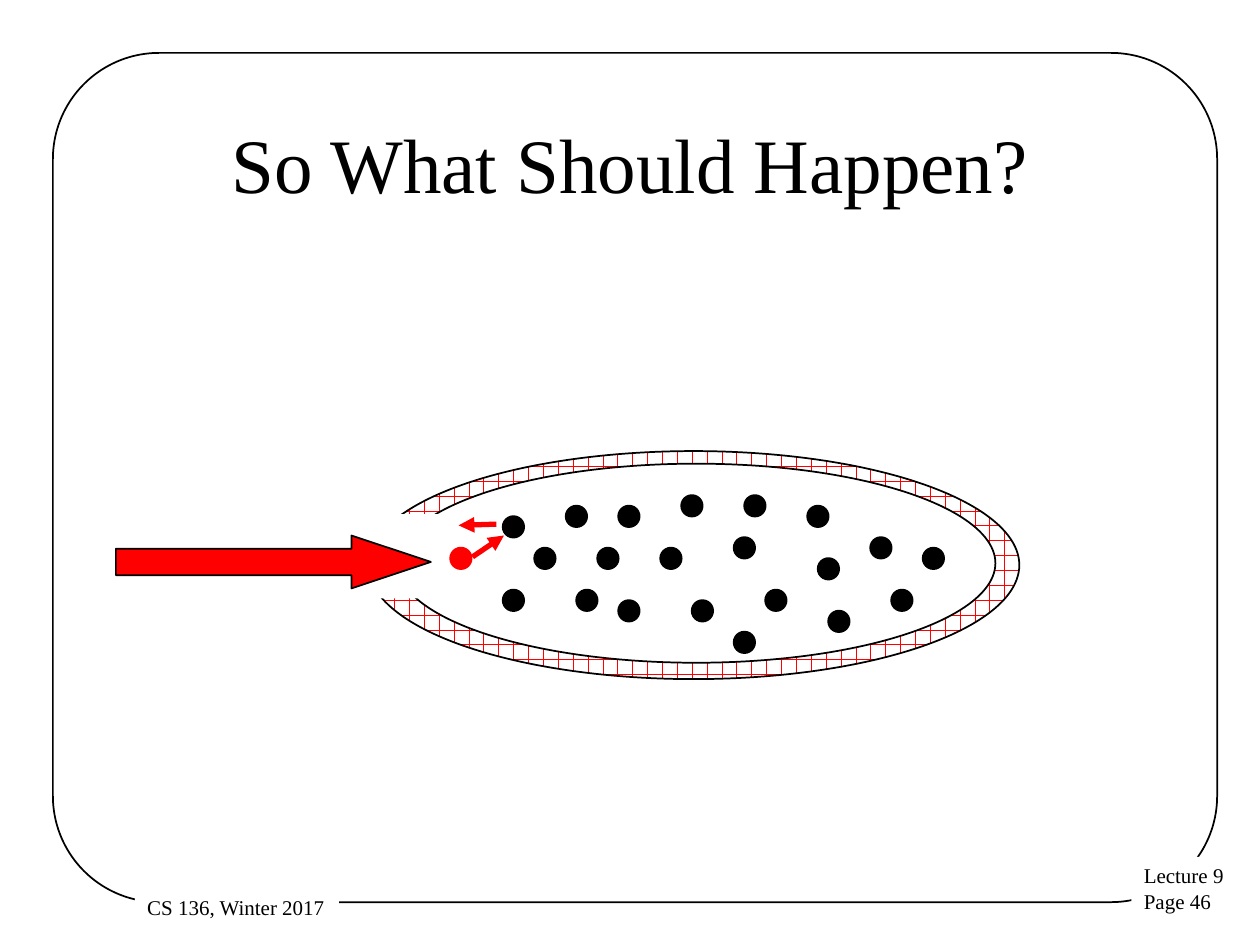
from typing import NamedTuple

from lxml import etree
from pptx import Presentation
from pptx.dml.color import RGBColor
from pptx.enum.dml import MSO_PATTERN
from pptx.enum.shapes import MSO_CONNECTOR, MSO_SHAPE
from pptx.enum.text import MSO_ANCHOR, MSO_AUTO_SIZE, PP_ALIGN
from pptx.oxml.ns import qn
from pptx.util import Inches, Pt

OVAL = MSO_SHAPE.OVAL
RECTANGLE = MSO_SHAPE.RECTANGLE
ROUNDED = MSO_SHAPE.ROUNDED_RECTANGLE
RIGHT_ARROW = MSO_SHAPE.RIGHT_ARROW
BRICK = MSO_PATTERN.HORIZONTAL_BRICK
STRAIGHT = MSO_CONNECTOR.STRAIGHT

COLORS = {"ink": "000000", "paper": "FFFFFF", "attack": "FF0000"}
FONT = "Times New Roman"

# The particles sit on a grid of twelfths of an inch.
GRID_LEFT, GRID_TOP, STEP = 3.99, 3.93, 1 / 12
DOT_SIZE = 0.17


class Box(NamedTuple):
    left: float
    top: float
    width: float
    height: float


class Label(NamedTuple):
    box: Box
    lines: tuple[str, ...]


class Arrow(NamedTuple):
    start: tuple[float, float]
    end: tuple[float, float]


class Dot(NamedTuple):
    column: int
    row: int


LABELS = (
    Label(Box(8.98, 6.8, 0.84, 0.51), ("Lecture 9", "Page 46")),
    Label(Box(1.07, 7.05, 1.62, 0.3), ("CS 136, Winter 2017",)),
)
DOT_COLUMNS_BY_ROW = {
    0: (17, 23),
    1: (6, 11, 29),
    2: (0,),
    4: (22, 35),
    5: (3, 9, 15, 40),
    6: (30,),
    9: (0, 7, 25, 37),
    10: (11, 18),
    11: (31,),
    13: (22,),
}
INTRUDER = Dot(-5, 5)
BOUNCES = (
    Arrow((3.75, 4.42), (4, 4.25)),
    Arrow((3.94, 4.16), (3.64, 4.17)),
)


def color(name: str) -> RGBColor:
    return RGBColor.from_string(COLORS[name])


def inches(box: Box) -> list[int]:
    return [Inches(length) for length in box]


def add_figure(shapes, kind, box: Box, fill: str | None = None, line: str | None = None):
    shape = shapes.add_shape(kind, *inches(box))
    shape.shadow.inherit = False
    if fill:
        shape.fill.solid()
        shape.fill.fore_color.rgb = color(fill)
    else:
        shape.fill.background()
    if line:
        shape.line.color.rgb = color(line)
        shape.line.width = Pt(1)
    else:
        shape.line.fill.background()
    return shape


def write(frame, lines: tuple[str, ...], size: int, align=PP_ALIGN.LEFT, anchor=MSO_ANCHOR.TOP) -> None:
    frame.vertical_anchor = anchor
    for index, text in enumerate(lines):
        paragraph = frame.add_paragraph() if index else frame.paragraphs[0]
        paragraph.alignment = align
        run = paragraph.add_run()
        run.text = text
        run.font.size = Pt(size)
        run.font.name = FONT
        run.font.color.rgb = color("ink")


def add_label(shapes, label: Label) -> None:
    text_box = shapes.add_textbox(*inches(label.box))
    text_box.fill.solid()
    text_box.fill.fore_color.rgb = color("paper")
    text_box.text_frame.word_wrap = False
    text_box.text_frame.auto_size = MSO_AUTO_SIZE.SHAPE_TO_FIT_TEXT
    write(text_box.text_frame, label.lines, size=12)


def add_dot(shapes, dot: Dot, name: str) -> None:
    box = Box(GRID_LEFT + dot.column * STEP, GRID_TOP + dot.row * STEP, DOT_SIZE, DOT_SIZE)
    add_figure(shapes, OVAL, box, fill=name, line=name)


def add_arrow(shapes, arrow: Arrow) -> None:
    points = [Inches(value) for value in (*arrow.start, *arrow.end)]
    connector = shapes.add_connector(STRAIGHT, *points)
    connector.line.color.rgb = color("attack")
    connector.line.width = Pt(3)
    etree.SubElement(connector.line._get_or_add_ln(), qn("a:tailEnd"), type="triangle")
    etree.SubElement(connector._element.spPr, qn("a:effectLst"))


def add_walled_cell(shapes) -> None:
    """Group the brick wall, its interior and the particles inside."""
    cell = shapes.add_group_shape().shapes
    wall = add_figure(cell, OVAL, Box(2.92, 3.58, 5.17, 1.81), line="ink")
    wall.fill.patterned()
    wall.fill.pattern = BRICK
    wall.fill.fore_color.rgb = color("attack")
    wall.fill.back_color.rgb = color("paper")
    add_figure(cell, OVAL, Box(3.15, 3.68, 4.75, 1.58), fill="paper", line="ink")
    for row, columns in DOT_COLUMNS_BY_ROW.items():
        for column in columns:
            add_dot(cell, Dot(column, row), "ink")


def main() -> None:
    presentation = Presentation()
    presentation.slide_width, presentation.slide_height = Inches(10), Inches(7.5)
    slide = presentation.slides.add_slide(presentation.slide_layouts[5])
    shapes = slide.shapes

    title = shapes.title
    title.left, title.top, title.width, title.height = inches(Box(0.75, 0.67, 8.5, 1.25))
    write(title.text_frame, ("So What Should Happen?",), size=44,
          align=PP_ALIGN.CENTER, anchor=MSO_ANCHOR.MIDDLE)

    border = add_figure(shapes, ROUNDED, Box(0.42, 0.42, 9.24, 6.74), line="ink")
    border.adjustments[0] = 0.125
    for label in LABELS:
        add_label(shapes, label)

    add_walled_cell(shapes)
    add_figure(shapes, RECTANGLE, Box(2.42, 4.08, 1.08, 0.67), fill="paper")
    attack = add_figure(shapes, RIGHT_ARROW, Box(0.92, 4.25, 2.5, 0.42), fill="attack", line="ink")
    attack.adjustments[0], attack.adjustments[1] = 0.5, 1.5
    add_dot(shapes, INTRUDER, "attack")
    for bounce in BOUNCES:
        add_arrow(shapes, bounce)

    presentation.save("out.pptx")


if __name__ == "__main__":
    main()
